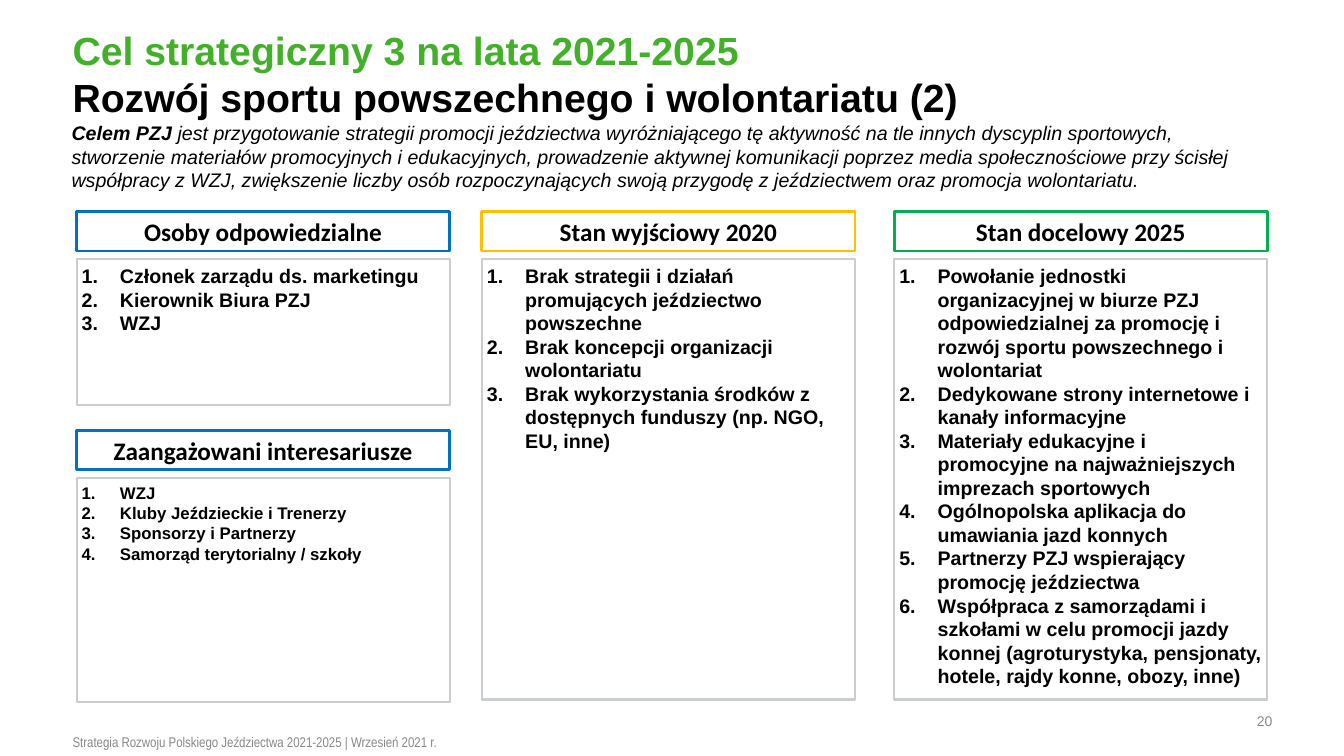
from dataclasses import dataclass

import pptx
import pptx.dml.color
import pptx.enum.shapes
import pptx.enum.text
import pptx.oxml
import pptx.util
import lxml.etree

PX = 9144  # EMU per px, 100 px to the inch
ALIGN = pptx.enum.text.PP_ALIGN
ANCHOR = pptx.enum.text.MSO_ANCHOR


@dataclass(frozen=True)
class Theme:
    green: str = "43B02A"
    black: str = "000000"
    grey: str = "888888"
    frame: str = "CACED0"
    blue: str = "0070C0"
    yellow: str = "FFC000"
    target: str = "00B050"
    text_font: str = "Arial"
    header_font: str = "Calibri"
    footer_font: str = "Arial Narrow"
    title_size: int = 28
    header_size: int = 18
    body_size: int = 14
    small_size: int = 12
    footer_size: int = 10
    leading: float = 1.2


THEME = Theme()
INSET = 5
INDENT = 38
HEADER_HEIGHT = 39
HEADER_GAP = 8


def rgb(color):
    return pptx.dml.color.RGBColor.from_string(color)


def emu(box):
    return [length * PX for length in box]


def set_frame(shape, anchor, wrap=True):
    frame = shape.text_frame
    frame.word_wrap = wrap
    frame.vertical_anchor = anchor
    frame.margin_left = frame.margin_right = INSET * PX
    frame.margin_top = frame.margin_bottom = INSET * PX
    return frame


def style(paragraph, size, font=THEME.text_font, color=THEME.black,
          bold=None, align=ALIGN.LEFT):
    paragraph.alignment = align
    paragraph.font.name = font
    paragraph.font.size = pptx.util.Pt(size)
    paragraph.font.bold = bold
    paragraph.font.color.rgb = rgb(color)
    if font == THEME.text_font:
        paragraph.line_spacing = pptx.util.Pt(size * THEME.leading)


def add_text(slide, box, anchor, wrap=True):
    return set_frame(slide.shapes.add_textbox(*emu(box)), anchor, wrap)


def add_outline(slide, box, color, width):
    shape = slide.shapes.add_shape(
        pptx.enum.shapes.MSO_SHAPE.RECTANGLE, *emu(box))
    shape.shadow.inherit = False
    shape.fill.background()
    shape.line.color.rgb = rgb(color)
    shape.line.width = pptx.util.Pt(width)
    return shape


def number(paragraph):
    properties = paragraph._p.get_or_add_pPr()
    properties.set("marL", str(INDENT * PX))
    properties.set("indent", str(-INDENT * PX))
    bullet = lxml.etree.SubElement(
        properties, pptx.oxml.ns.qn("a:buAutoNum"), type="arabicPeriod")
    defaults = properties.find(pptx.oxml.ns.qn("a:defRPr"))
    defaults.addprevious(bullet)


def add_title(slide, box):
    paragraph = add_text(slide, box, ANCHOR.MIDDLE).paragraphs[0]
    style(paragraph, THEME.title_size, bold=True)
    goal = paragraph.add_run()
    goal.text = "Cel strategiczny 3 na lata 2021-2025"
    goal.font.color.rgb = rgb(THEME.green)
    paragraph.add_line_break()
    paragraph.add_run().text = "Rozwój sportu powszechnego i wolontariatu (2)"


def add_summary(slide, box):
    paragraph = add_text(slide, box, ANCHOR.TOP).paragraphs[0]
    style(paragraph, THEME.body_size)
    paragraph.font.italic = True
    paragraph.space_before = pptx.util.Pt(3)
    lead = paragraph.add_run()
    lead.text = "Celem PZJ "
    lead.font.bold = True
    paragraph.add_run().text = (
        "jest przygotowanie strategii promocji jeździectwa wyróżniającego "
        "tę aktywność na tle innych dyscyplin sportowych, stworzenie "
        "materiałów promocyjnych i edukacyjnych, prowadzenie aktywnej "
        "komunikacji poprzez media społecznościowe przy ścisłej współpracy "
        "z WZJ, zwiększenie liczby osób rozpoczynających swoją przygodę "
        "z jeździectwem oraz promocja wolontariatu.")


def add_card(slide, box, color, heading, items, size=THEME.body_size):
    left, top, width, height = box

    # Heading
    header = add_outline(slide, (left, top, width, HEADER_HEIGHT), color, 2)
    paragraph = set_frame(header, ANCHOR.MIDDLE).paragraphs[0]
    paragraph.text = heading
    style(paragraph, THEME.header_size, THEME.header_font, bold=True,
          align=ALIGN.CENTER)

    # Numbered list
    offset = HEADER_HEIGHT + HEADER_GAP
    panel = add_outline(
        slide, (left, top + offset, width, height - offset), THEME.frame, 1.5)
    frame = set_frame(panel, ANCHOR.TOP)
    for index, item in enumerate(items):
        paragraph = frame.add_paragraph() if index else frame.paragraphs[0]
        paragraph.text = item
        style(paragraph, size, bold=True)
        number(paragraph)


def add_small_text(slide, box, text, font, align):
    wrap = align == ALIGN.LEFT
    paragraph = add_text(slide, box, ANCHOR.MIDDLE, wrap).paragraphs[0]
    paragraph.text = text
    style(paragraph, THEME.footer_size, font, THEME.grey, align=align)


def add_goal_slide(presentation):
    slide = presentation.slides.add_slide(presentation.slide_layouts[6])
    add_title(slide, (67, 30, 1200, 85))
    add_summary(slide, (66, 115, 1181, 81))

    # Cards
    column_lefts, top, width = (76, 478, 887), 210, 370
    add_card(slide, (column_lefts[0], top, width, 192), THEME.blue,
             "Osoby odpowiedzialne", [
                 "Członek zarządu ds. marketingu",
                 "Kierownik Biura PZJ",
                 "WZJ"])
    add_card(slide, (column_lefts[0], 427, width, 269), THEME.blue,
             "Zaangażowani interesariusze", [
                 "WZJ",
                 "Kluby Jeździeckie i Trenerzy",
                 "Sponsorzy i Partnerzy",
                 "Samorząd terytorialny / szkoły"], THEME.small_size)
    add_card(slide, (column_lefts[1], top, width, 484), THEME.yellow,
             "Stan wyjściowy 2020", [
                 "Brak strategii i działań promujących jeździectwo powszechne",
                 "Brak koncepcji organizacji wolontariatu",
                 "Brak wykorzystania środków z dostępnych funduszy "
                 "(np. NGO, EU, inne)"])
    add_card(slide, (column_lefts[2], top, width, 484), THEME.target,
             "Stan docelowy 2025", [
                 "Powołanie jednostki organizacyjnej w biurze PZJ "
                 "odpowiedzialnej za promocję i rozwój sportu powszechnego "
                 "i wolontariat",
                 "Dedykowane strony internetowe i kanały informacyjne",
                 "Materiały edukacyjne i promocyjne na najważniejszych "
                 "imprezach sportowych",
                 "Ogólnopolska aplikacja do umawiania jazd konnych",
                 "Partnerzy PZJ wspierający promocję jeździectwa",
                 "Współpraca z samorządami i szkołami w celu promocji jazdy "
                 "konnej (agroturystyka, pensjonaty, hotele, rajdy konne, "
                 "obozy, inne)"])

    # Footer and page number
    add_small_text(slide, (67, 723, 866, 27),
                   "Strategia Rozwoju Polskiego Jeździectwa 2021-2025 | "
                   "Wrzesień 2021 r.", THEME.footer_font, ALIGN.LEFT)
    add_small_text(slide, (1241, 702, 26, 27), "20", THEME.text_font,
                   ALIGN.RIGHT)


def main():
    presentation = pptx.Presentation()
    presentation.slide_width = 1333 * PX
    presentation.slide_height = 750 * PX
    add_goal_slide(presentation)
    presentation.save("out.pptx")


if __name__ == "__main__":
    main()
